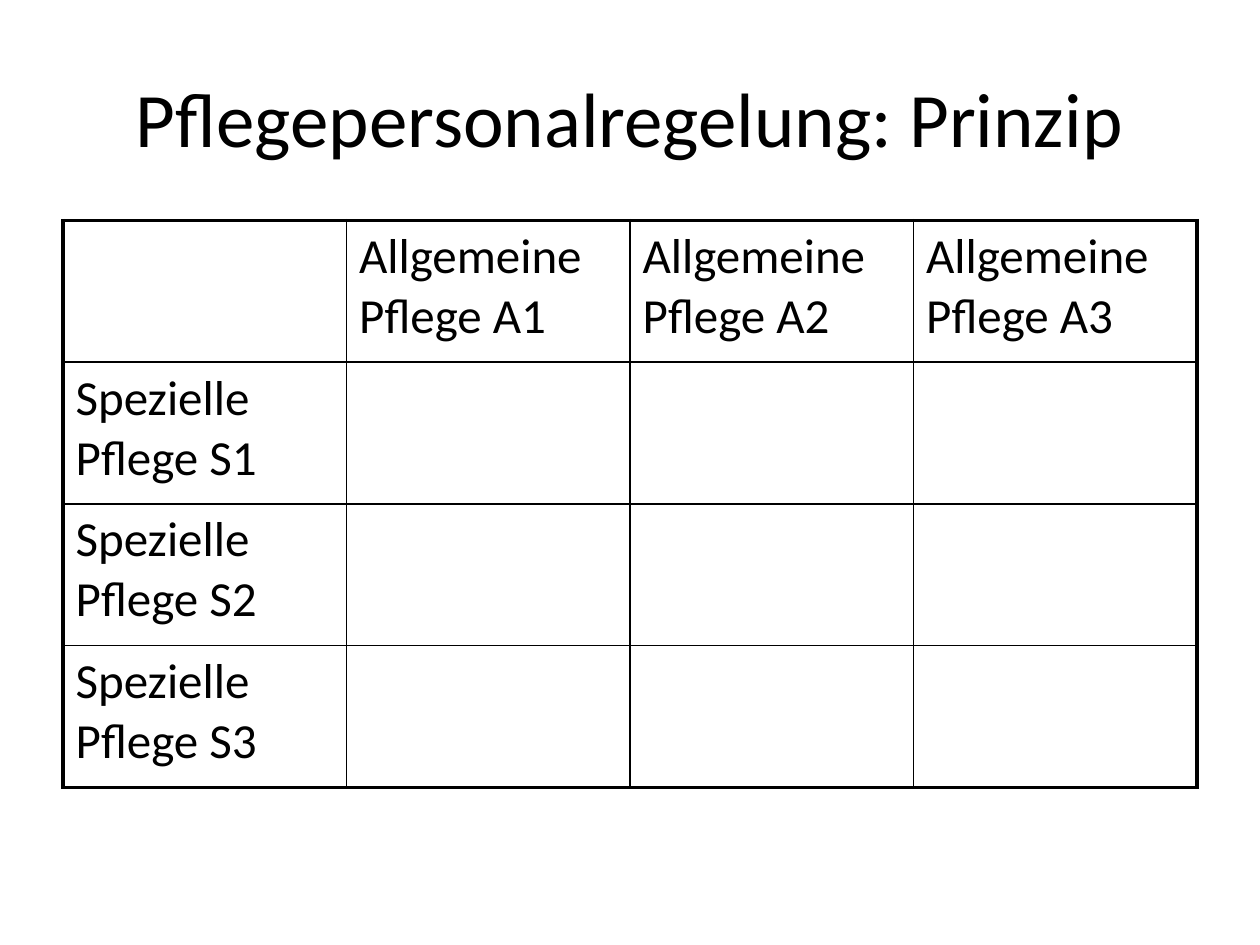
from dataclasses import dataclass

from lxml.etree import SubElement
from pptx import Presentation
from pptx.dml.color import RGBColor
from pptx.enum.text import MSO_ANCHOR, PP_ALIGN
from pptx.oxml.ns import qn
from pptx.util import Inches, Pt


@dataclass(frozen=True)
class Theme:
    """Colours, font and sizes of the deck."""
    font: str = "Calibri"
    ink: str = "000000"
    title_size: float = 44
    cell_size: float = 28
    outer_line: float = 2.25
    inner_line: float = 1


class PageBuilder:
    """Holds the theme and the current page and adds elements to it."""

    def __init__(self, page, theme):
        """Keep the page and its theme."""
        self.page = page
        self.theme = theme

    def style(self, para, size):
        """Apply the theme font to a paragraph."""
        para.font.name = self.theme.font
        para.font.size = Pt(size)
        para.font.color.rgb = RGBColor.from_string(self.theme.ink)

    def title(self, text, left, top, width, height):
        """Place and fill the title placeholder."""
        box = self.page.shapes.title
        box.left, box.top, box.width, box.height = map(Inches, (left, top, width, height))
        box.text_frame.text = text
        box.text_frame.vertical_anchor = MSO_ANCHOR.MIDDLE
        para = box.text_frame.paragraphs[0]
        para.alignment = PP_ALIGN.CENTER
        self.style(para, self.theme.title_size)

    def border(self, cell, side, width):
        """Draw one side of a cell."""
        line = SubElement(cell._tc.get_or_add_tcPr(), qn(f"a:ln{side}"), w=str(Pt(width)))
        fill = SubElement(line, qn("a:solidFill"))
        SubElement(fill, qn("a:srgbClr"), val=self.theme.ink)

    def cell(self, cell, text, outer_sides):
        """Fill a cell and draw its four sides."""
        for side in "LRTB":
            outer = side in outer_sides
            self.border(cell, side, self.theme.outer_line if outer else self.theme.inner_line)
        cell.fill.background()
        cell.text = text
        para = cell.text_frame.paragraphs[0]
        self.style(para, self.theme.cell_size)
        spacing = para._p.get_or_add_pPr().get_or_add_spcBef()
        SubElement(spacing, qn("a:spcPct"), val="20000")

    def table(self, rows, left, top, width, height):
        """Add an evenly spaced table with a heavy outer frame."""
        last_row, last_column = len(rows) - 1, len(rows[0]) - 1
        frame = self.page.shapes.add_table(
            len(rows), len(rows[0]), *map(Inches, (left, top, width, height)))
        table = frame.table
        table.first_row = table.horz_banding = False
        for r, row in enumerate(rows):
            for c, text in enumerate(row):
                edges = {"L": c == 0, "R": c == last_column, "T": r == 0, "B": r == last_row}
                outer_sides = [side for side, outer in edges.items() if outer]
                self.cell(table.cell(r, c), text, outer_sides)


def main():
    """Build and save the deck."""
    deck = Presentation()
    deck.slide_width, deck.slide_height = Inches(10), Inches(7.5)
    page = deck.slides.add_slide(deck.slide_layouts[5])
    builder = PageBuilder(page, Theme())
    builder.title("Pflegepersonalregelung: Prinzip", 0.5, 0.3, 9, 1.25)
    levels = (1, 2, 3)
    header = [""] + [f"Allgemeine Pflege A{level}" for level in levels]
    body = [[f"Spezielle Pflege S{level}"] + [""] * len(levels) for level in levels]
    builder.table([header] + body, 0.5, 1.75, 9, 4.5)
    deck.save("out.pptx")


if __name__ == "__main__":
    main()
